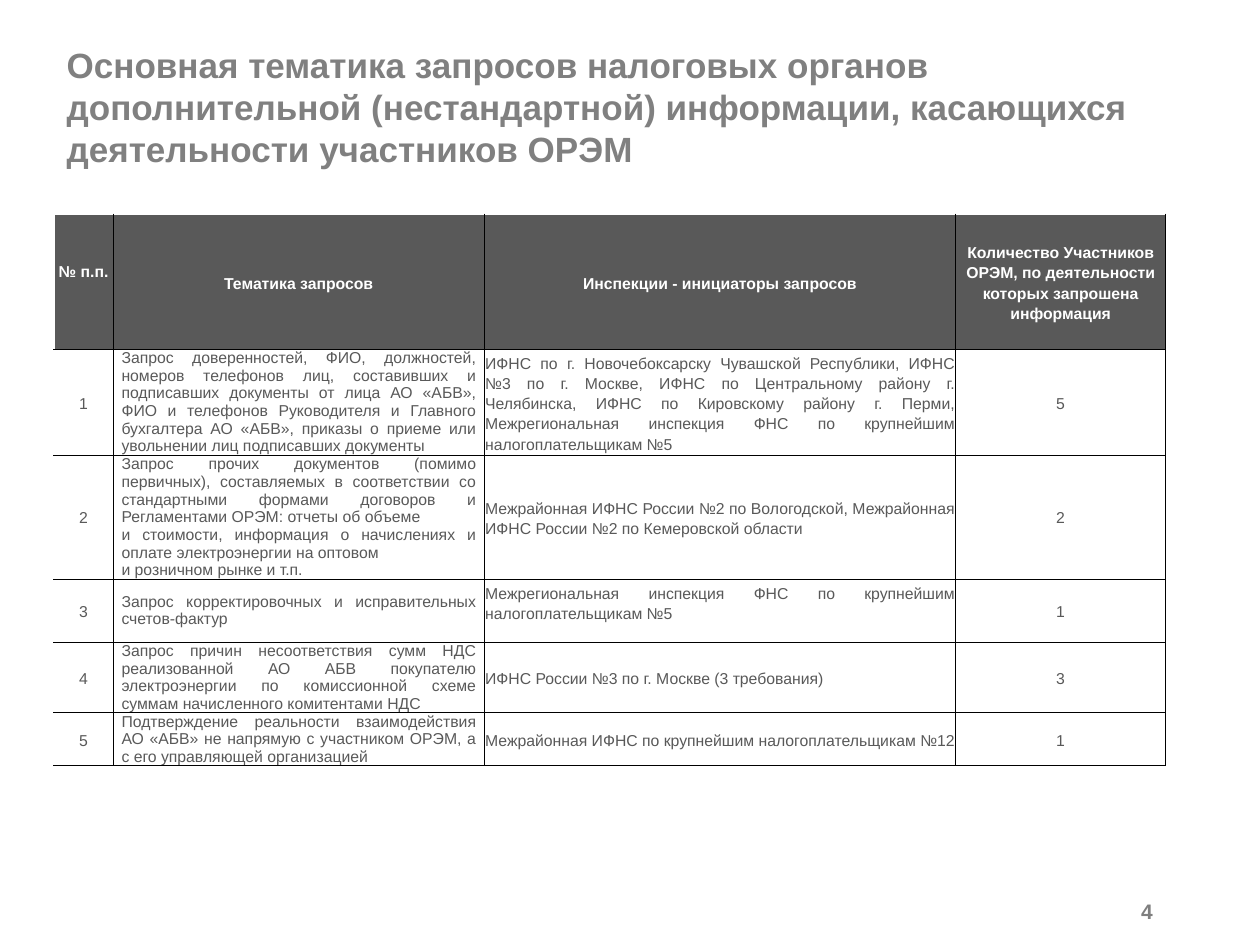
from lxml.etree import SubElement
from pptx import Presentation
from pptx.dml.color import RGBColor
from pptx.enum.text import MSO_ANCHOR, MSO_AUTO_SIZE, PP_ALIGN
from pptx.oxml.ns import qn
from pptx.util import Cm, Pt

TITLE = ("Основная тематика запросов налоговых органов дополнительной (нестандартной) "
         "информации, касающихся деятельности участников ОРЭМ")
PAGE = "4"
HEADER = ["№ п.п.", "Тематика запросов", "Инспекции - инициаторы запросов",
          "Количество Участников ОРЭМ, по деятельности которых запрошена информация"]
REQUESTS = [
    ("Запрос доверенностей, ФИО, должностей, номеров телефонов лиц, составивших и "
     "подписавших документы от лица АО «АБВ», ФИО и телефонов Руководителя и Главного "
     "бухгалтера АО «АБВ», приказы о приеме или увольнении лиц подписавших документы",
     "ИФНС по г. Новочебоксарску Чувашской Республики, ИФНС №3 по г. Москве, ИФНС по "
     "Центральному району г. Челябинска, ИФНС по Кировскому району г. Перми, "
     "Межрегиональная инспекция ФНС по крупнейшим налогоплательщикам №5", 5),
    ("Запрос прочих документов (помимо первичных), составляемых в соответствии со "
     "стандартными формами договоров и Регламентами ОРЭМ: отчеты об объеме\n"
     "и стоимости, информация о начислениях и оплате электроэнергии на оптовом\n"
     "и розничном рынке и т.п.",
     "Межрайонная ИФНС России №2 по Вологодской, Межрайонная ИФНС России №2 по "
     "Кемеровской области", 2),
    ("Запрос корректировочных и исправительных счетов-фактур",
     "Межрегиональная инспекция ФНС по крупнейшим налогоплательщикам №5", 1),
    ("Запрос причин несоответствия сумм НДС реализованной АО АБВ покупателю "
     "электроэнергии по комиссионной схеме суммам начисленного комитентами НДС",
     "ИФНС России №3 по г. Москве (3 требования)", 3),
    ("Подтверждение реальности взаимодействия АО «АБВ» не напрямую с участником ОРЭМ, "
     "а с его управляющей организацией",
     "Межрайонная ИФНС по крупнейшим налогоплательщикам №12", 1),
]
COL_WIDTHS = [1.19, 7.48, 9.5, 4.24]
ROW_HEIGHTS = [2.72, 2.14, 2.48, 1.27, 1.41, 1.07]
BOTTOM_INSETS = {(0, 0): 0.4, (3, 2): 0.33}
LEFT, WIDTH = 1.09, 22.4


def color(value):
    return RGBColor.from_string(value)


def format_text(tf, size, fill, bold=False, align=PP_ALIGN.LEFT, spacing=1.0):
    for p in tf.paragraphs:
        p.alignment = align
        p.line_spacing = spacing
        for r in p.runs:
            r.font.name = "Arial"
            r.font.size = Pt(size)
            r.font.bold = bold
            r.font.color.rgb = color(fill)


def add_borders(cell, sides):
    tcPr = cell._tc.get_or_add_tcPr()
    for side in sides:
        ln = SubElement(tcPr, qn(f"a:ln{side}"), w=str(Pt(0.5)))
        SubElement(SubElement(ln, qn("a:solidFill")), qn("a:srgbClr"), val="000000")


def fill_cell(cell, row, col, text):
    header = row == 0
    cell.text = text
    cell.vertical_anchor = MSO_ANCHOR.MIDDLE
    tight = header or col == 2
    cell.margin_left = cell.margin_right = Cm(0.02 if tight else 0.17)
    cell.margin_top = Cm(0.02 if tight else 0)
    cell.margin_bottom = Cm(BOTTOM_INSETS.get((row, col), 0))
    centred = header or col in (0, 3)
    single = (row, col) == (0, 0) or (col == 1 and not header)
    format_text(cell.text_frame, 9, "FFFFFF" if header else "595959", header,
                PP_ALIGN.CENTER if centred else PP_ALIGN.JUSTIFY,
                1.0 if single else 1.15)
    add_borders(cell, ("L" if col else "") + "R" + ("T" if row else "") + "B")
    cell.fill.solid()
    cell.fill.fore_color.rgb = color("595959" if header else "FFFFFF")


def main():
    prs = Presentation()
    prs.slide_width, prs.slide_height = Cm(25.4), Cm(19.05)
    s = prs.slides.add_slide(prs.slide_layouts[5])

    title = s.shapes.title
    title.left, title.top, title.width, title.height = map(Cm, (LEFT, 0.76, WIDTH, 2.77))
    tf = title.text_frame
    tf.text = TITLE
    tf.word_wrap = True
    tf.auto_size = MSO_AUTO_SIZE.NONE
    tf.vertical_anchor = MSO_ANCHOR.MIDDLE
    format_text(tf, 20, "808080", True)

    rows = [HEADER] + [[str(i), topic, offices, str(count)]
                       for i, (topic, offices, count) in enumerate(REQUESTS, 1)]
    table = s.shapes.add_table(len(rows), len(HEADER), Cm(LEFT), Cm(4.32),
                               Cm(WIDTH), Cm(sum(ROW_HEIGHTS))).table
    table.horz_banding = False
    for column, width in zip(table.columns, COL_WIDTHS):
        column.width = Cm(width)
    for row, height in zip(table.rows, ROW_HEIGHTS):
        row.height = Cm(height)
    for i, values in enumerate(rows):
        for j, text in enumerate(values):
            fill_cell(table.cell(i, j), i, j, text)

    number = s.shapes.add_textbox(Cm(20.7), Cm(17.93), Cm(2.79), Cm(0.86))
    tf = number.text_frame
    tf.text = PAGE
    tf.word_wrap = True
    tf.vertical_anchor = MSO_ANCHOR.MIDDLE
    format_text(tf, 12, "7F7F7F", True, PP_ALIGN.RIGHT)

    prs.save("out.pptx")


if __name__ == "__main__":
    main()
